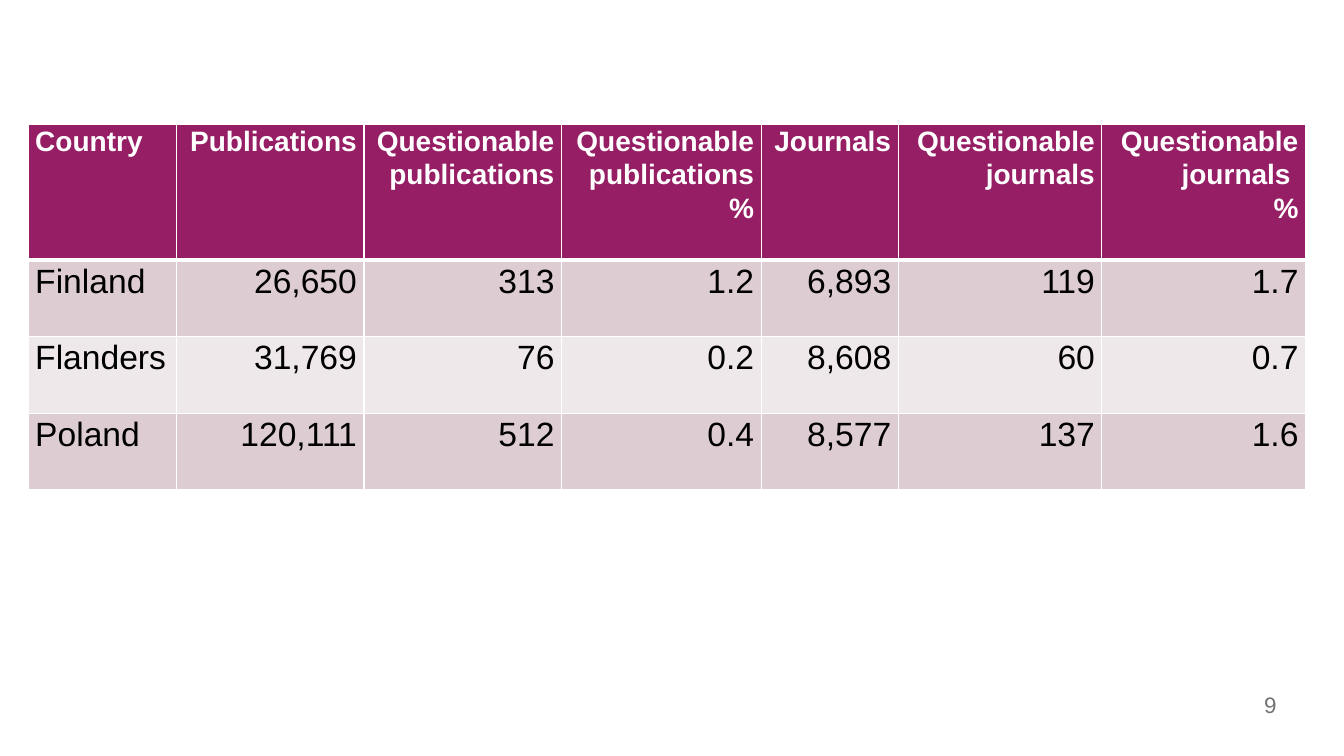
from lxml.etree import SubElement
from pptx import Presentation
from pptx.dml.color import RGBColor
from pptx.enum.text import MSO_ANCHOR as Anchor, PP_ALIGN as Align
from pptx.oxml.ns import qn
from pptx.util import Inches, Pt

WHITE = RGBColor(0xFF, 0xFF, 0xFF)
BLACK = RGBColor(0x00, 0x00, 0x00)
GREY = RGBColor(0x73, 0x73, 0x73)
PLUM = RGBColor(0x96, 0x1E, 0x64)
ROSE = RGBColor(0xDD, 0xCD, 0xD3)
PALE_ROSE = RGBColor(0xEF, 0xE8, 0xEA)

FONT = "Arial"
COLUMN_WIDTHS = [1.47, 1.86, 1.96, 1.98, 1.36, 2.02, 2.02]
ROW_HEIGHTS = [1.35, 0.76, 0.76, 0.76]
ROWS = [
    ["Country", "Publications", "Questionable publications", "Questionable publications %",
     "Journals", "Questionable journals", "Questionable journals \n%"],
    ["Finland", "26,650", "313", "1.2", "6,893", "119", "1.7"],
    ["Flanders", "31,769", "76", "0.2", "8,608", "60", "0.7"],
    ["Poland", "120,111", "512", "0.4", "8,577", "137", "1.6"],
]


def write(para, text, size, color, bold=False):
    """Add the text run by run, with a line break between its lines."""
    for index, line in enumerate(text.split("\n")):
        if index:
            para.add_line_break()
        run = para.add_run()
        run.text = line
        run.font.name = FONT
        run.font.size = Pt(size)
        run.font.bold = bold
        run.font.color.rgb = color


def draw_borders(cell, top, bottom):
    """Give a cell white borders, with point widths for its top and bottom."""
    properties = cell._tc.get_or_add_tcPr()
    for side, width in (("L", 1), ("R", 1), ("T", top), ("B", bottom)):
        line = SubElement(properties, qn(f"a:ln{side}"), w=str(Pt(width)))
        fill = SubElement(line, qn("a:solidFill"))
        SubElement(fill, qn("a:srgbClr"), val=str(WHITE))


def fill_cell(cell, text, row, column):
    """Style one cell by its row and column and write its text."""
    header = row == 0
    cell.margin_left = cell.margin_right = Inches(0.07)
    cell.margin_top = cell.margin_bottom = 0
    draw_borders(cell, 3 if row == 1 else 1, 3 if header else 1)
    cell.fill.solid()
    cell.fill.fore_color.rgb = PLUM if header else (PALE_ROSE, ROSE)[row % 2]
    para = cell.text_frame.paragraphs[0]
    para.alignment = Align.RIGHT if column else Align.LEFT
    para.line_spacing = 1.07
    write(para, text, 20 if header else 24, WHITE if header else BLACK, header)


def add_country_table(page, left, top):
    """Place the table of publications and journals by country."""
    table = page.shapes.add_table(
        len(ROWS), len(COLUMN_WIDTHS), Inches(left), Inches(top),
        Inches(sum(COLUMN_WIDTHS)), Inches(sum(ROW_HEIGHTS))).table
    for column, width in zip(table.columns, COLUMN_WIDTHS):
        column.width = Inches(width)
    for row, height in zip(table.rows, ROW_HEIGHTS):
        row.height = Inches(height)
    for row, texts in enumerate(ROWS):
        for column, text in enumerate(texts):
            fill_cell(table.cell(row, column), text, row, column)


def add_page_number(page, left, top, width, height):
    """Place the page number at the right of its box."""
    box = page.shapes.add_textbox(Inches(left), Inches(top), Inches(width), Inches(height))
    frame = box.text_frame
    frame.word_wrap = True
    frame.vertical_anchor = Anchor.MIDDLE
    para = frame.paragraphs[0]
    para.alignment = Align.RIGHT
    write(para, "9", 16, GREY)


def main():
    """Build the slide and save the deck."""
    deck = Presentation()
    deck.slide_width, deck.slide_height = Inches(13.33), Inches(7.5)
    page = deck.slides.add_slide(deck.slide_layouts[6])
    add_country_table(page, 0.28, 1.23)
    add_page_number(page, 10.3, 6.8, 2.46, 0.37)
    deck.save("out.pptx")


if __name__ == "__main__":
    main()
